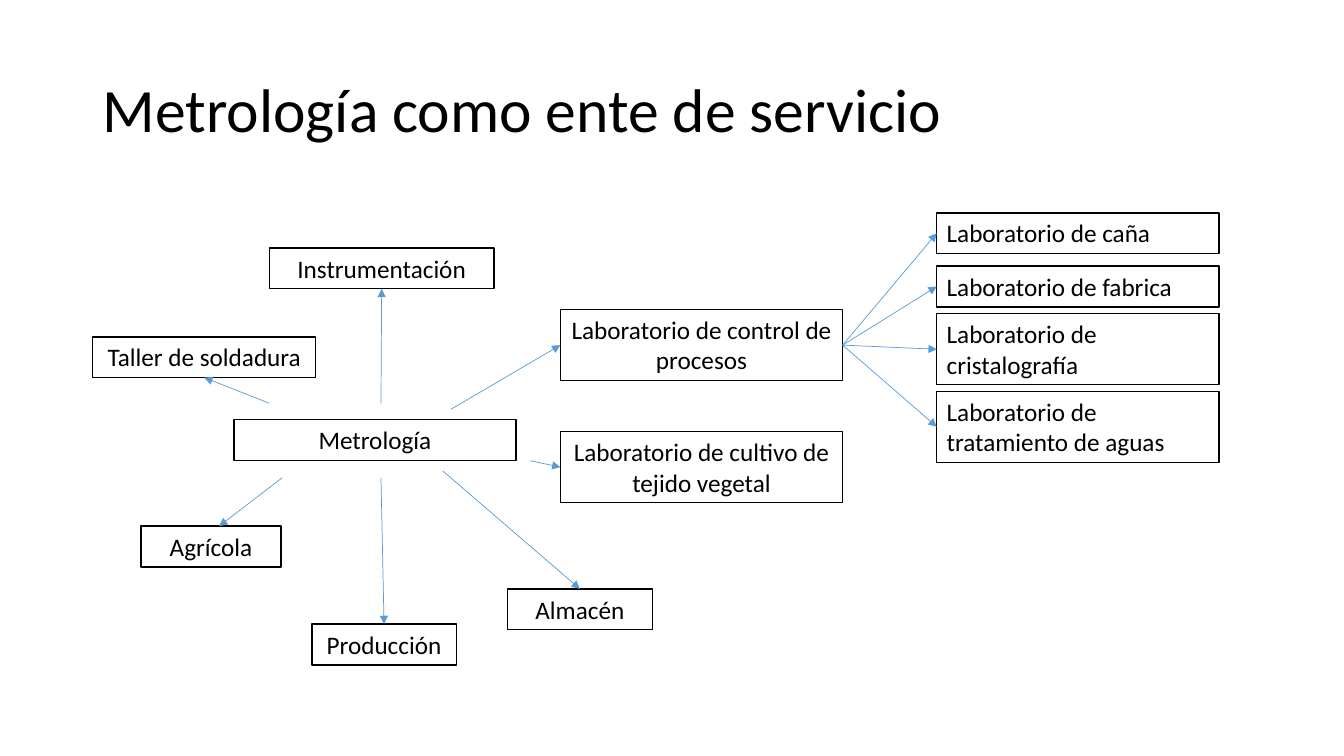
from pptx import Presentation
from pptx.dml.color import RGBColor
from pptx.enum.shapes import MSO_CONNECTOR, MSO_SHAPE
from pptx.enum.text import MSO_ANCHOR, MSO_AUTO_SIZE, PP_ALIGN
from pptx.oxml.ns import qn
from pptx.util import Inches, Pt
from lxml import etree

RECT = MSO_SHAPE.RECTANGLE
STRAIGHT = MSO_CONNECTOR.STRAIGHT
LEFT, CENTER = PP_ALIGN.LEFT, PP_ALIGN.CENTER
TOP_SIDE, LEFT_SIDE, BOTTOM_SIDE, RIGHT_SIDE = range(4)

BLACK = RGBColor(0x00, 0x00, 0x00)
WHITE = RGBColor(0xFF, 0xFF, 0xFF)
BLUE = RGBColor(0x5B, 0x9B, 0xD5)

# Lengths are percentages of the slide's width and height
ONE_LINE, TWO_LINES = 5.4, 9.4
WIDE = 21


class ServiceMap:
    font = "Calibri"

    def __init__(self, prs):
        self.width, self.height = prs.slide_width, prs.slide_height
        self.slide = prs.slides.add_slide(prs.slide_layouts[5])

    def point(self, x, y):
        return round(self.width * x / 100), round(self.height * y / 100)

    def style(self, paragraph, size, align):
        paragraph.alignment = align
        paragraph.font.name = self.font
        paragraph.font.size = Pt(size)
        paragraph.font.color.rgb = BLACK

    def title(self, text, x, y, w, h):
        title = self.slide.shapes.title
        title.left, title.top = self.point(x, y)
        title.width, title.height = self.point(w, h)
        frame = title.text_frame
        frame.text = text
        frame.auto_size = MSO_AUTO_SIZE.NONE
        frame.vertical_anchor = MSO_ANCHOR.MIDDLE
        frame.paragraphs[0].line_spacing = 0.9
        self.style(frame.paragraphs[0], 44, LEFT)

    def box(self, text, x, y, w, h=ONE_LINE, align=CENTER):
        box = self.slide.shapes.add_shape(
            RECT, *self.point(x, y), *self.point(w, h))
        box.shadow.inherit = False
        box.fill.solid()
        box.fill.fore_color.rgb = WHITE
        box.line.color.rgb = BLACK
        box.line.width = Pt(1)
        frame = box.text_frame
        frame.text = text
        frame.word_wrap = True
        frame.auto_size = MSO_AUTO_SIZE.SHAPE_TO_FIT_TEXT
        frame.vertical_anchor = MSO_ANCHOR.TOP
        self.style(frame.paragraphs[0], 18, align)
        return box

    def arrow(self, start, end):
        """Each end is an (x, y) point or a (box, side) pair."""
        loose = [(0, 0) if hasattr(a, "text_frame") else self.point(a, b)
                 for a, b in (start, end)]
        arrow = self.slide.shapes.add_connector(STRAIGHT, *loose[0], *loose[1])
        for (target, side), join in ((start, arrow.begin_connect),
                                     (end, arrow.end_connect)):
            if hasattr(target, "text_frame"):
                join(target, side)
        arrow.line.color.rgb = BLUE
        arrow.line.width = Pt(0.5)
        etree.SubElement(arrow.line._get_or_add_ln(), qn("a:tailEnd"),
                         type="triangle")
        etree.SubElement(arrow._element.spPr, qn("a:effectLst"))


def main():
    prs = Presentation()
    prs.slide_width, prs.slide_height = Inches(13.333), Inches(7.5)
    service = ServiceMap(prs)
    service.title("Metrología como ente de servicio", 6.9, 5.3, 86.25, 19.3)

    # Metrology and the areas it serves
    service.box("Metrología", 17.4, 55.5, WIDE)
    instruments = service.box("Instrumentación", 20.05, 32.8, 16.7)
    control = service.box("Laboratorio de control de procesos",
                          41.7, 40.95, WIDE, TWO_LINES)
    culture = service.box("Laboratorio de cultivo de tejido vegetal",
                          41.7, 57.1, WIDE, TWO_LINES)
    warehouse = service.box("Almacén", 37.75, 77.9, 10.8)
    production = service.box("Producción", 23.2, 82.55, 10.75)
    service.box("Agrícola", 10.5, 69.6, 10.4)
    welding = service.box("Taller de soldadura", 6.9, 44.55, 16.6)

    # Arrows leaving from around the metrology box
    for start, end in (
        ((28.35, 53.35), (instruments, BOTTOM_SIDE)),
        ((33.55, 54.15), (control, LEFT_SIDE)),
        ((39.45, 60.95), (culture, LEFT_SIDE)),
        ((32.95, 62.3), (warehouse, TOP_SIDE)),
        ((28.35, 63.2), (production, TOP_SIDE)),
        ((21, 63.2), (16.3, 69.6)),
        ((20.05, 53.35), (welding, BOTTOM_SIDE)),
    ):
        service.arrow(start, end)

    # Laboratories under process control
    for name, y, height in (
        ("Laboratorio de caña", 28.15, ONE_LINE),
        ("Laboratorio de fabrica", 35.2, ONE_LINE),
        ("Laboratorio de cristalografía", 41.5, TWO_LINES),
        ("Laboratorio de tratamiento de aguas", 51.75, TWO_LINES),
    ):
        laboratory = service.box(name, 69.7, y, WIDE, height, LEFT)
        service.arrow((control, RIGHT_SIDE), (laboratory, LEFT_SIDE))

    prs.save("out.pptx")


if __name__ == "__main__":
    main()
